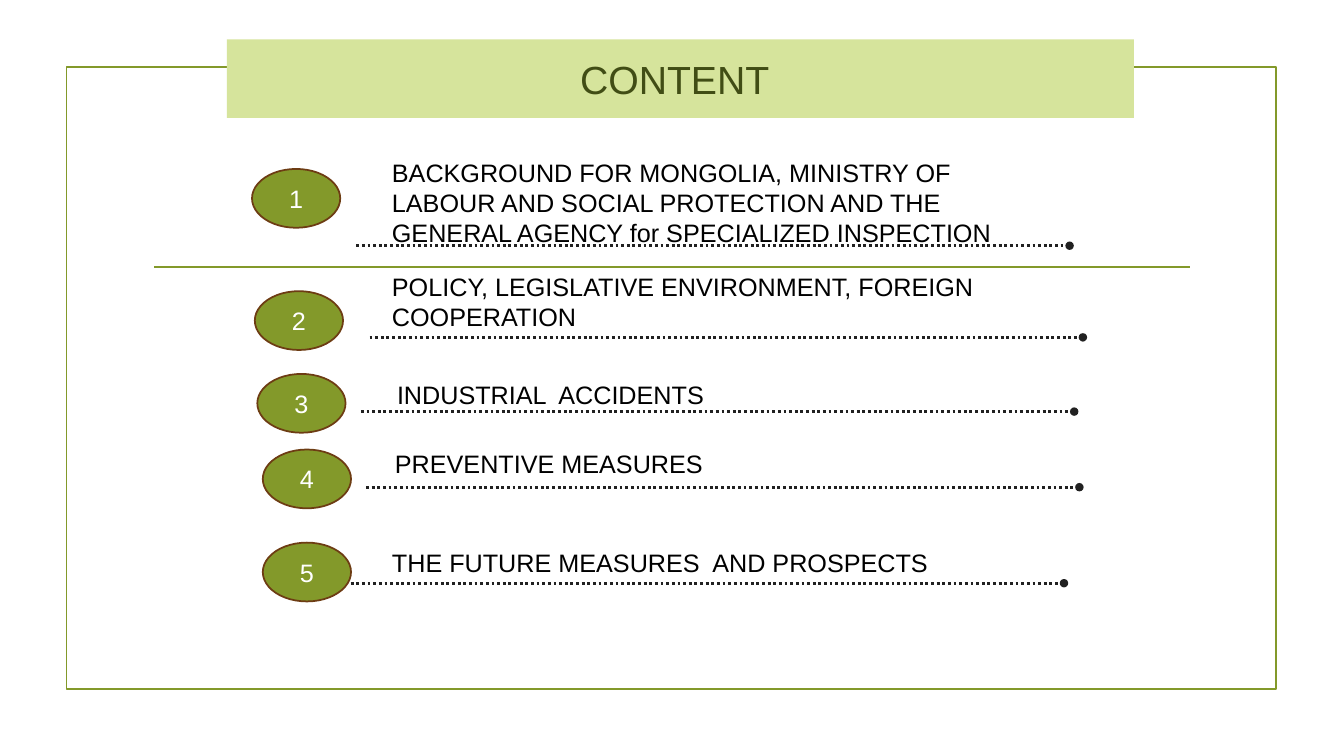
from dataclasses import dataclass
from pptx import Presentation
from pptx.dml.color import RGBColor
from pptx.enum.dml import MSO_LINE
from pptx.enum.shapes import MSO_CONNECTOR, MSO_SHAPE
from pptx.enum.text import MSO_ANCHOR, PP_ALIGN
from pptx.oxml.ns import qn
from pptx.util import Pt
from lxml import etree

# Content: text, then its left, top, width and height in points,
# the left and top of its badge, and the left and height of its dotted line
TITLE = "CONTENT"
ITEMS = [
    ("BACKGROUND FOR MONGOLIA, MINISTRY OF LABOUR AND SOCIAL PROTECTION "
     "AND THE GENERAL AGENCY for SPECIALIZED INSPECTION",
     (272.9, 108.7, 487.4, 72.7), (180, 120.7), (254.5, 175.5)),
    ("POLICY, LEGISLATIVE ENVIRONMENT, FOREIGN COOPERATION",
     (272.9, 190.1, 534.2, 50.9), (182, 208), (264, 241)),
    ("INDUSTRIAL  ACCIDENTS",
     (276.5, 267.1, 507.6, 29.1), (183.8, 267.1), (257.8, 294)),
    ("PREVENTIVE MEASURES",
     (275, 316.8, 468.7, 29.1), (187.7, 321.1), (261.5, 348)),
    ("THE FUTURE MEASURES  AND PROSPECTS",
     (272.9, 387.4, 510.5, 29.1), (187.7, 387.6), (250.5, 416.6)),
]

# Fixed layout
FRAME = (47.5, 48.1, 864, 444)
BANNER = (162, 28.1, 648, 56.2)
DIVIDER = (110.2, 850.3, 190.6)  # left, right, height
BADGE_SIZE = (63, 42)
LEADER_LENGTH = 509.5
TITLE_SHIFT = 8  # extra right inset that moves the title left of centre


@dataclass(frozen=True)
class Theme:
    font: str = "Arial"
    title_size: float = 28
    body_size: float = 18
    thin: float = 1.25
    dotted: float = 2
    green: str = "83992A"
    pale: str = "D6E49C"
    dark_green: str = "414D15"
    brown: str = "6D3C13"
    charcoal: str = "212121"
    black: str = "000000"
    white: str = "FFFFFF"


THEME = Theme()


def color(value):
    return RGBColor.from_string(value)


def points(values):
    return [Pt(value) for value in values]


def set_text(shape, text, size, ink, align):
    frame = shape.text_frame
    frame.word_wrap = True
    frame.text = text
    paragraph = frame.paragraphs[0]
    paragraph.alignment = align
    font = paragraph.runs[0].font
    font.name, font.size, font.color.rgb = THEME.font, Pt(size), color(ink)


def add_box(slide, kind, bounds, fill=None, line=None):
    shape = slide.shapes.add_shape(kind, *points(bounds))
    shape.shadow.inherit = False
    if fill:
        shape.fill.solid()
        shape.fill.fore_color.rgb = color(fill)
    else:
        shape.fill.background()
    if line:
        shape.line.color.rgb = color(line)
        shape.line.width = Pt(THEME.thin)
    else:
        shape.line.fill.background()
    shape.text_frame.vertical_anchor = MSO_ANCHOR.MIDDLE
    return shape


def add_rule(slide, left, right, height, ink, width):
    rule = slide.shapes.add_connector(
        MSO_CONNECTOR.STRAIGHT, *points((left, height, right, height)))
    rule.line.color.rgb = color(ink)
    rule.line.width = Pt(width)
    etree.SubElement(rule._element.spPr, qn("a:effectLst"))
    return rule


def add_leader(slide, left, height):
    leader = add_rule(slide, left, left + LEADER_LENGTH, height,
                      THEME.charcoal, THEME.dotted)
    leader.line.dash_style = MSO_LINE.ROUND_DOT
    tail = etree.SubElement(leader.line._get_or_add_ln(), qn("a:tailEnd"))
    tail.set("type", "oval")


def main():
    presentation = Presentation()
    presentation.slide_width, presentation.slide_height = Pt(960), Pt(540)
    slide = presentation.slides.add_slide(presentation.slide_layouts[6])

    # Frame, divider and title banner
    add_box(slide, MSO_SHAPE.RECTANGLE, FRAME, line=THEME.green)
    add_rule(slide, *DIVIDER, THEME.green, THEME.thin)
    banner = add_box(slide, MSO_SHAPE.RECTANGLE, BANNER, fill=THEME.pale)
    set_text(banner, TITLE, THEME.title_size, THEME.dark_green, PP_ALIGN.CENTER)
    banner.text_frame.margin_right += Pt(TITLE_SHIFT)

    # Numbered items
    for number, (text, bounds, badge_corner, leader) in enumerate(ITEMS, 1):
        add_leader(slide, *leader)
        badge = add_box(slide, MSO_SHAPE.OVAL, badge_corner + BADGE_SIZE,
                        THEME.green, THEME.brown)
        set_text(badge, str(number), THEME.body_size, THEME.white, PP_ALIGN.CENTER)
        label = slide.shapes.add_textbox(*points(bounds))
        set_text(label, text, THEME.body_size, THEME.black, PP_ALIGN.LEFT)

    presentation.save("out.pptx")


if __name__ == "__main__":
    main()
